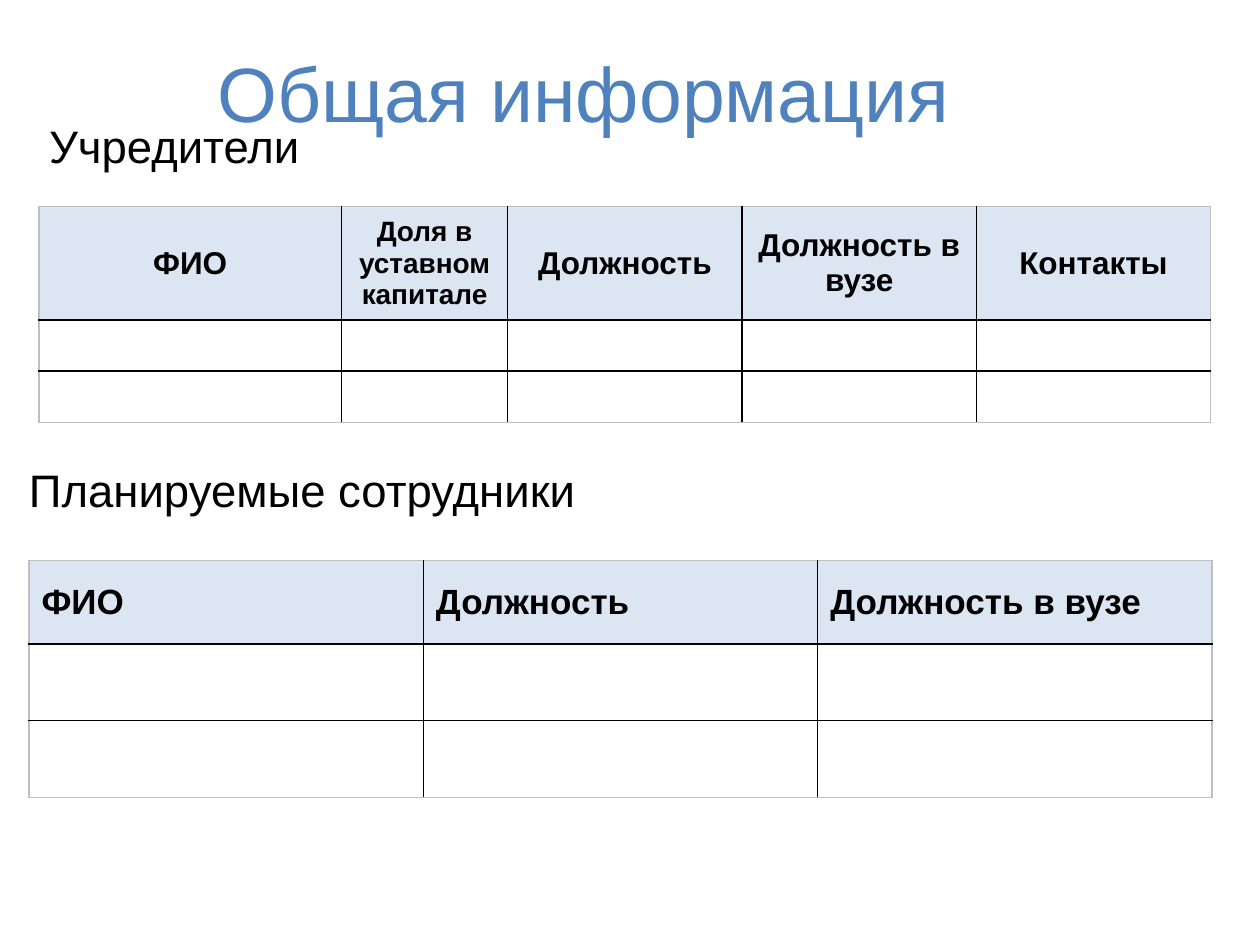
import pptx
import pptx.dml.color
import pptx.enum.text
import pptx.oxml.ns
import pptx.util
from lxml import etree
from pptx.util import Inches

FONT = "Arial"
BLACK, BLUE, GREY, HEADER_FILL = "000000", "4F81BD", "BFBFBF", "DCE6F2"
CENTER = pptx.enum.text.PP_ALIGN.CENTER
LEFT = pptx.enum.text.PP_ALIGN.LEFT

# text, (left, top, width, height), size, colour, alignment, top inset
TEXTS = [
    ("Учредители", (0.39, 0.94, 2.34, 0.44), 26, BLACK, LEFT, 0),
    ("Планируемые сотрудники", (0.23, 3.67, 5, 0.44), 26, BLACK, LEFT, 0),
    ("Общая информация", (0.39, 0.31, 8.49, 0.3), 44, BLUE, CENTER, 0.05),
]

TABLES = [
    {
        "at": (0.31, 1.64), "align": CENTER,
        "widths": [2.4, 1.32, 1.86, 1.86, 1.86], "heights": [0.9, 0.4, 0.4],
        "headers": [("ФИО", 18), ("Доля в уставном капитале", 16), ("Должность", 18),
                    ("Должность в вузе", 18), ("Контакты", 18)],
    },
    {
        "at": (0.23, 4.45), "align": LEFT,
        "widths": [3.13] * 3, "heights": [0.66, 0.61, 0.61],
        "headers": [("ФИО", 20), ("Должность", 20), ("Должность в вузе", 20)],
    },
]


def rgb(value):
    return pptx.dml.color.RGBColor.from_string(value)


def style(para, size, colour, align, bold=False):
    para.alignment = align
    para.font.name = FONT
    para.font.size = pptx.util.Pt(size)
    para.font.bold = bold
    para.font.color.rgb = rgb(colour)


def add_text(page, text, at, size, colour, align, top_inset):
    box = page.shapes.add_textbox(*map(Inches, at))
    frame = box.text_frame
    frame.word_wrap = True
    frame.margin_left = frame.margin_right = frame.margin_bottom = 0
    frame.margin_top = Inches(top_inset)
    frame.text = text
    style(frame.paragraphs[0], size, colour, align)


def set_borders(cell, colours):
    """Give the left, right, top and bottom edges 1 pt lines in these colours."""
    properties = cell._tc.get_or_add_tcPr()
    qn = pptx.oxml.ns.qn
    for side, colour in zip("LRTB", colours):
        line = etree.SubElement(properties, qn(f"a:ln{side}"), w=str(pptx.util.Pt(1)))
        fill = etree.SubElement(line, qn("a:solidFill"))
        etree.SubElement(fill, qn("a:srgbClr"), val=colour)


def add_table(page, at, align, widths, heights, headers):
    left, top = at
    row_count, column_count = len(heights), len(widths)
    table = page.shapes.add_table(
        row_count, column_count, Inches(left), Inches(top),
        Inches(sum(widths)), Inches(sum(heights))).table
    table.first_row = table.horz_banding = False
    for column, width in zip(table.columns, widths):
        column.width = Inches(width)
    for row, height in zip(table.rows, heights):
        row.height = Inches(height)

    for r in range(row_count):
        for c in range(column_count):
            cell = table.cell(r, c)
            outer = (c == 0, c == column_count - 1, r == 0, r == row_count - 1)
            set_borders(cell, [GREY if edge else BLACK for edge in outer])
            if r > 0:
                cell.fill.background()
                continue
            cell.fill.solid()
            cell.fill.fore_color.rgb = rgb(HEADER_FILL)
            cell.vertical_anchor = pptx.enum.text.MSO_ANCHOR.MIDDLE
            cell.text, size = headers[c]
            style(cell.text_frame.paragraphs[0], size, BLACK, align, bold=True)


def main():
    deck = pptx.Presentation()
    deck.slide_width, deck.slide_height = Inches(10), Inches(7.5)
    page = deck.slides.add_slide(deck.slide_layouts[6])
    for table in TABLES:
        add_table(page, **table)
    for text in TEXTS:
        add_text(page, *text)
    deck.save("out.pptx")


if __name__ == "__main__":
    main()
